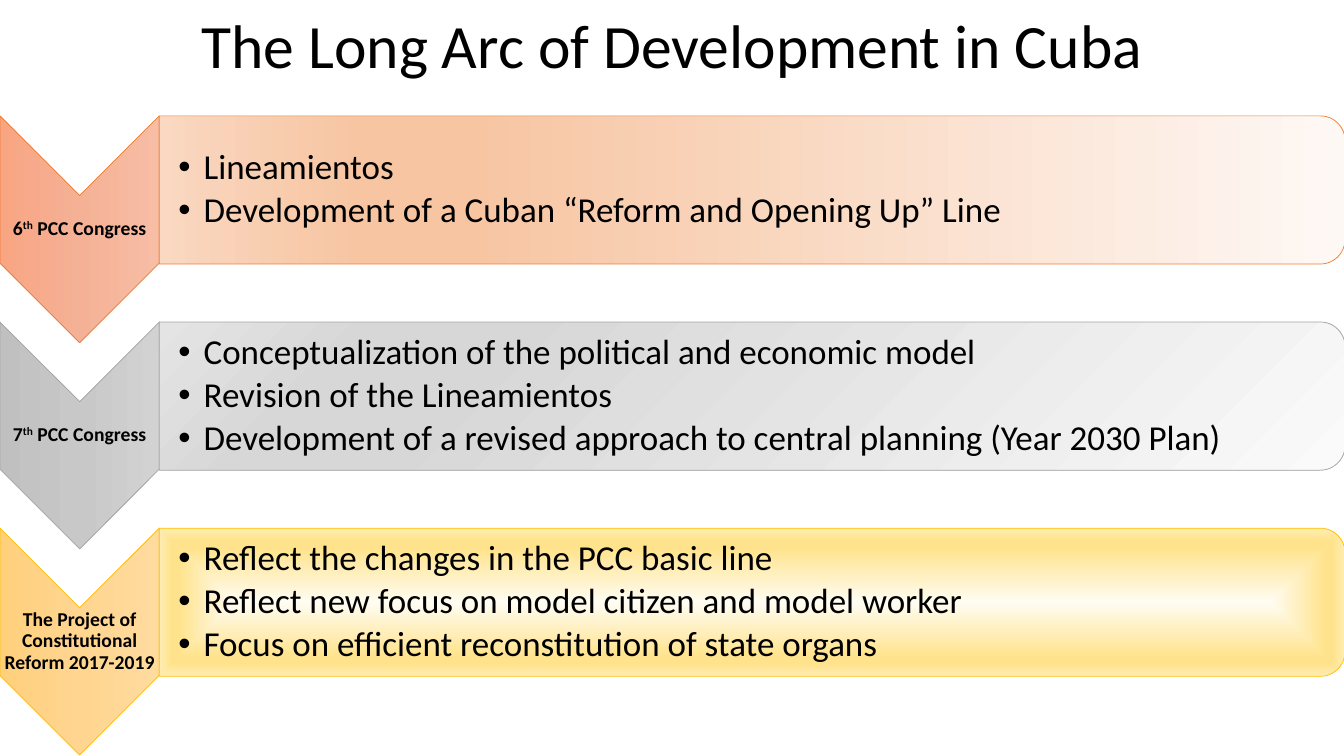
from lxml import etree
from pptx import Presentation
from pptx.dml.color import RGBColor
from pptx.enum.shapes import MSO_SHAPE as Shape
from pptx.enum.text import MSO_ANCHOR as Anchor, MSO_AUTO_SIZE as Fit, PP_ALIGN as Align
from pptx.oxml import parse_xml
from pptx.oxml.ns import nsdecls, qn
from pptx.util import Inches, Pt

# Content
TITLE = "The Long Arc of Development in Cuba"
STAGES = [
    {"label": ("6", "th", " PCC Congress"), "hue": "orange",
     "points": ["Lineamientos",
                "Development of a Cuban “Reform and Opening Up” Line"]},
    {"label": ("7", "th", " PCC Congress"), "hue": "gray",
     "points": ["Conceptualization of the political and economic model",
                "Revision of the Lineamientos",
                "Development of a revised approach to central planning (Year 2030 Plan)"]},
    {"label": ("The Project of Constitutional Reform 2017-2019",), "hue": "gold",
     "points": ["Reflect the changes in the PCC basic line",
                "Reflect new focus on model citizen and model worker",
                "Focus on efficient reconstitution of state organs"]},
]

# Colours, gradient stops and gradient directions
COLORS = {
    "text": "000000",
    "orange": {"line": "ED7D31", "arrow": ["F7BDA5", "F5B196", "F8A582"],
               "panel": ["FEF8F5", "F7C5A2", "F7C5A2", "FAD8C1"]},
    "gray": {"line": "A5A5A5", "arrow": ["D2D2D2", "C8C8C8", "C0C0C0"],
             "panel": ["FAFAFA", "D7D7D7", "D7D7D7", "E4E4E4"]},
    "gold": {"line": "FFC000", "arrow": ["FFDB9E", "FFD590", "FFD07C"],
             "panel": ["FFFCF2", "FFE38C", "FFE38C", "FFECB2"]},
}
STOPS = {"arrow": [0, 50, 100], "panel": [0, 74, 83, 100]}
DOWN = '<a:lin ang="5400000" scaled="0"/>'
PATH = '<a:path path="{}"><a:fillToRect l="{}" t="{}" r="{}" b="{}"/></a:path>'
FLOWS = {
    "orange": DOWN,
    "gray": PATH.format("circle", 100000, 100000, 0, 0),
    "gold": PATH.format("shape", 50000, 50000, 50000, 50000),
}

# Layout in inches
WIDE, HIGH = 13.33, 7.5
TOP, END = 1.15, 7.49
ARROW_W, ARROW_H = 1.58, 2.25
PANEL_W, PANEL_H = 11.76, 1.47
LABEL_H, LIST_W, LIST_H = 0.68, 11.68, 1.32
PITCH = (END - ARROW_H - TOP) / (len(STAGES) - 1)

deck = Presentation()
deck.slide_width, deck.slide_height = Inches(WIDE), Inches(HIGH)
slide = deck.slides.add_slide(deck.slide_layouts[5])


def style(par, size, bold=False):
    par.line_spacing = 0.9
    font = par.font
    font.name, font.size, font.bold = "Calibri", Pt(size), bold
    font.color.rgb = RGBColor.from_string(COLORS["text"])


def block(kind, part, hue, x, y, w, h, flow):
    """Draw a shape turned by 90 degrees that covers x, y, w, h on the slide."""
    shape = slide.shapes.add_shape(
        kind, Inches(x + (w - h) / 2), Inches(y + (h - w) / 2), Inches(h), Inches(w))
    shape.rotation = 90
    shape.shadow.inherit = False
    shape.line.color.rgb = RGBColor.from_string(COLORS[hue]["line"])
    shape.line.width = Pt(0.5)
    stops = "".join(
        f'<a:gs pos="{pos * 1000}"><a:srgbClr val="{tint}"/></a:gs>'
        for pos, tint in zip(STOPS[part], COLORS[hue][part]))
    shape._element.spPr.find(qn("a:prstGeom")).addnext(parse_xml(
        f'<a:gradFill {nsdecls("a")} rotWithShape="1">'
        f"<a:gsLst>{stops}</a:gsLst>{flow}</a:gradFill>"))


def text_box(x, y, w, h, left, rest):
    frame = slide.shapes.add_textbox(Inches(x), Inches(y), Inches(w), Inches(h)).text_frame
    frame.word_wrap = True
    frame.vertical_anchor = Anchor.MIDDLE
    frame.margin_left = Inches(left)
    frame.margin_top = frame.margin_right = frame.margin_bottom = Inches(rest)
    return frame


def bullet(par):
    props = par._p.get_or_add_pPr()
    props.set("marL", str(Inches(0.25)))
    props.set("indent", str(-Inches(0.25)))
    etree.SubElement(props, qn("a:buFont")).set("typeface", "Arial")
    etree.SubElement(props, qn("a:buChar")).set("char", "•")


# Title
title = slide.shapes.title
title.left, title.top, title.width, title.height = map(Inches, (0.92, 0, 11.5, 0.97))
title.text_frame.text = TITLE
title.text_frame.auto_size = Fit.NONE
title.text_frame.vertical_anchor = Anchor.MIDDLE
head = title.text_frame.paragraphs[0]
head.alignment = Align.CENTER
style(head, 44)

# Stages
for row, stage in enumerate(STAGES):
    y, hue = TOP + row * PITCH, stage["hue"]

    # Arrow and its label
    block(Shape.CHEVRON, "arrow", hue, 0, y, ARROW_W, ARROW_H, DOWN)
    frame = text_box(0, y + (ARROW_H - LABEL_H) / 2, ARROW_W, LABEL_H, 0.01, 0.01)
    par = frame.paragraphs[0]
    par.alignment = Align.CENTER
    style(par, 14, True)
    for i, part in enumerate(stage["label"]):
        run = par.add_run()
        run.text = part
        if i == 1:
            run._r.get_or_add_rPr().set("baseline", "30000")

    # Panel and its list
    block(Shape.ROUND_2_SAME_RECTANGLE, "panel", hue, ARROW_W, y, PANEL_W, PANEL_H, FLOWS[hue])
    frame = text_box(ARROW_W, y + (PANEL_H - LIST_H) / 2, LIST_W, LIST_H, 0.19, 0.02)
    for i, point in enumerate(stage["points"]):
        par = frame.add_paragraph() if i else frame.paragraphs[0]
        par.text = point
        par.level = 1
        bullet(par)
        par.space_after = Pt(3.75)
        style(par, 25)

deck.save("out.pptx")
